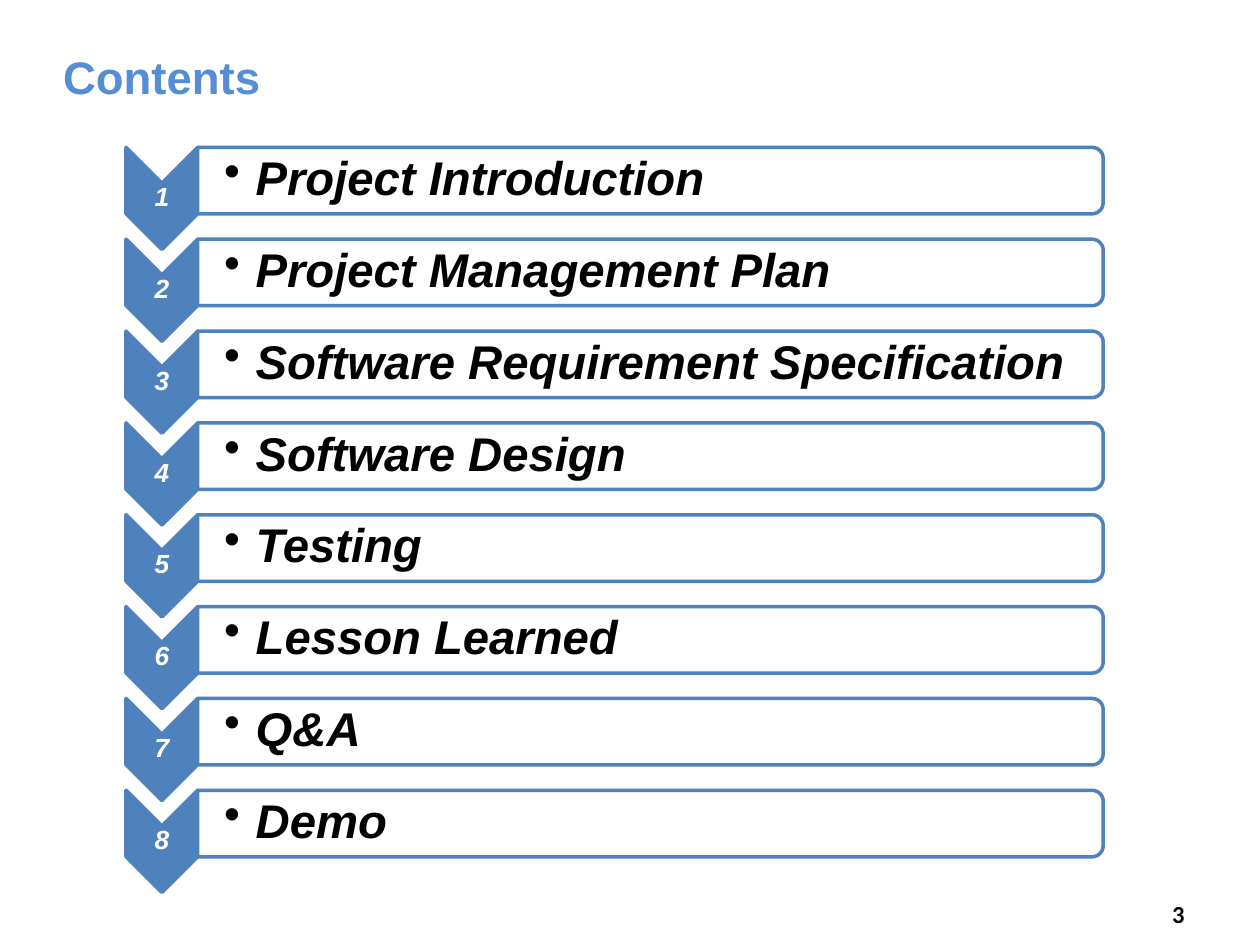
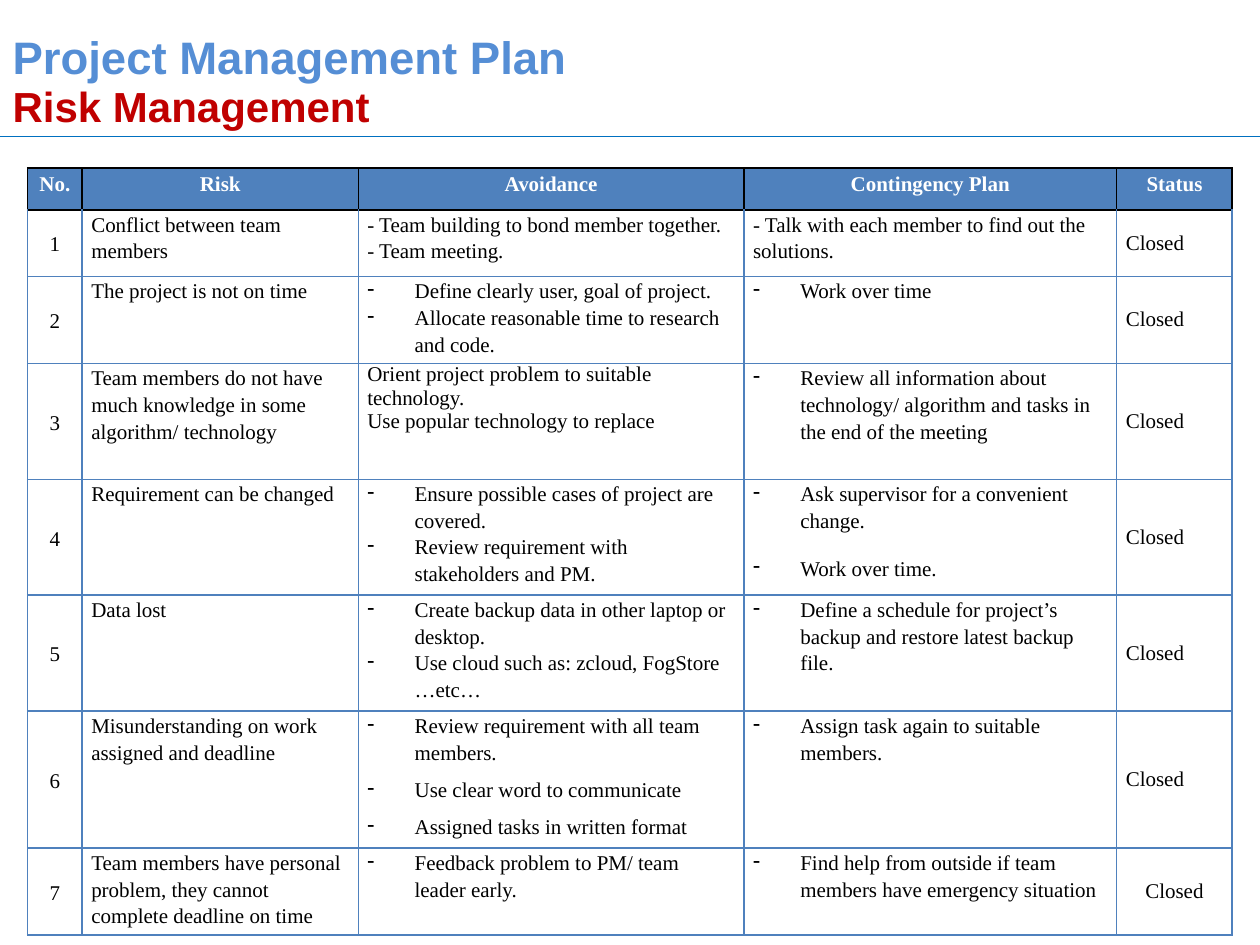
from lxml import etree
from pptx import Presentation
from pptx.dml.color import RGBColor
from pptx.enum.shapes import MSO_CONNECTOR, MSO_SHAPE
from pptx.enum.text import MSO_ANCHOR, MSO_AUTO_SIZE, PP_ALIGN
from pptx.oxml.ns import qn
from pptx.util import Pt

LEFT, MID, RIGHT = PP_ALIGN.LEFT, PP_ALIGN.CENTER, PP_ALIGN.RIGHT
TOP, MIDDLE = MSO_ANCHOR.TOP, MSO_ANCHOR.MIDDLE
FIXED = MSO_AUTO_SIZE.NONE
CHEVRON = MSO_SHAPE.CHEVRON
ROUND = MSO_SHAPE.ROUND_2_SAME_RECTANGLE
STRAIGHT = MSO_CONNECTOR.STRAIGHT

SKY = RGBColor(0x55, 0x8E, 0xD5)
BLUE = RGBColor(0x4F, 0x81, 0xBD)
RULE = RGBColor(0x00, 0x70, 0xC0)
RED = RGBColor(0xC0, 0x00, 0x00)
BLACK = RGBColor(0, 0, 0)
WHITE = RGBColor(0xFF, 0xFF, 0xFF)

SANS, SERIF, SMALL = "Arial", "Times New Roman", "Calibri"
WIDTH, HEIGHT = 720, 540
TITLE_ONLY = 5

TOPICS = [
    "Project Introduction", "Project Management Plan",
    "Software Requirement Specification", "Software Design",
    "Testing", "Lesson Learned", "Q&A", "Demo",
]


def plain(text, lead=1.15):
    return text, lead, False, 0


def dash(text, gap=0):
    return text, 1.15, True, gap


HEADS = ["No.", "Risk", "Avoidance", "Contingency Plan", "Status"]
COLS = [31.2, 157.8, 220.4, 213, 66]
ROWS = [24, 37.9, 49.7, 66.3, 66.3, 66.3, 78.3, 49.7]
RISKS = [
    ("Conflict between team members",
     [plain("- Team building to bond member together."),
      plain("- Team meeting.")],
     [plain("- Talk with each member to find out the solutions.")]),
    ("The project is not on time",
     [dash("Define clearly user, goal of project."),
      dash("Allocate reasonable time to research and code.")],
     [dash("Work over time")]),
    ("Team members do not have much knowledge in some algorithm/ technology",
     [plain("Orient project problem to suitable technology.", 1),
      plain("Use popular technology to replace", 1)],
     [dash("Review all information about technology/ algorithm and tasks "
           "in the end of the meeting")]),
    ("Requirement can be changed",
     [dash("Ensure possible cases of project are covered."),
      dash("Review requirement with stakeholders and PM.")],
     [dash("Ask supervisor for a convenient change.", 6),
      dash("Work over time.", 6)]),
    ("Data lost",
     [dash("Create backup data in other laptop or desktop."),
      dash("Use cloud such as: zcloud, FogStore …etc…")],
     [dash("Define a schedule for project’s backup and restore latest "
           "backup file.")]),
    ("Misunderstanding on work assigned and deadline",
     [dash("Review requirement with all team members."),
      dash("Use clear word to communicate", 6),
      dash("Assigned tasks in written format")],
     [dash("Assign task again to suitable members.")]),
    ("Team members have personal problem, they cannot complete deadline "
     "on time",
     [dash("Feedback problem to PM/ team leader early.")],
     [dash("Find help from outside if team members have emergency "
           "situation")]),
]


def style(para, size, color, face=SANS, bold=True, slant=False,
          align=LEFT, lead=1.0, gap=0):
    para.alignment = align
    para.line_spacing = lead
    para.space_before = para.space_after = Pt(gap)
    for run in para.runs:
        font = run.font
        font.name, font.size = face, Pt(size)
        font.bold, font.italic = bold, slant
        font.color.rgb = color


def bullet(para, mark, inset):
    props = para._p.get_or_add_pPr()
    props.set("marL", str(Pt(inset)))
    props.set("indent", str(-Pt(inset)))
    etree.SubElement(props, qn("a:buChar")).set("char", mark)


def pad(item, left, top, right, low):
    item.margin_left, item.margin_top = Pt(left), Pt(top)
    item.margin_right, item.margin_bottom = Pt(right), Pt(low)


def place(shape, box):
    shape.left, shape.top, shape.width, shape.height = map(Pt, box)


def label(slide, box, text, pads):
    frame = slide.shapes.add_textbox(*map(Pt, box)).text_frame
    frame.word_wrap = True
    frame.vertical_anchor = MIDDLE
    pad(frame, *pads)
    frame.text = text
    return frame.paragraphs[0]


def head(slide, box, lines, anchor, pads):
    title = slide.shapes.title
    place(title, box)
    frame = title.text_frame
    frame.text = "\n".join(text for text, _, _ in lines)
    frame.auto_size = FIXED
    frame.word_wrap = True
    frame.vertical_anchor = anchor
    pad(frame, *pads)
    for para, (_, size, color) in zip(frame.paragraphs, lines):
        style(para, size, color, lead=0.95)


def turned(slide, kind, box, fill):
    left, top, width, height = box
    shift = (width - height) / 2
    shape = slide.shapes.add_shape(
        kind, *map(Pt, (left + shift, top - shift, height, width)))
    shape.rotation = 90
    shape.shadow.inherit = False
    shape.fill.solid()
    shape.fill.fore_color.rgb = fill
    shape.line.color.rgb = BLUE
    shape.line.width = Pt(2)


def topic(slide, box, number, text):
    left, top, width, height = box
    arrow = 41
    turned(slide, CHEVRON, (left, top, arrow, height), BLUE)
    para = label(slide, (left, top + 20.4, arrow, 17.3), str(number), (1,) * 4)
    style(para, 15, WHITE, slant=True, align=MID, lead=0.9)
    turned(slide, ROUND, (left + arrow, top, width - arrow, 38), WHITE)
    para = label(slide, (left + arrow, top + 1.8, width - arrow, 34),
                 text, (15.1, 1.4, 1.4, 1.4))
    style(para, 27, BLACK, slant=True, lead=0.9)
    bullet(para, "•", 18)


def topics(slide, box):
    left, top, width, height = box
    tall = 58.4
    step = (height - tall) / (len(TOPICS) - 1)
    for i, text in enumerate(TOPICS):
        topic(slide, (left, top + i * step, width, tall), i + 1, text)


def page(slide, box, number):
    para = label(slide, box, number, (7.2, 3.6, 7.2, 3.6))
    style(para, 14, BLACK, SMALL, align=RIGHT)


def rule(slide, box):
    left, top, width, _ = box
    line = slide.shapes.add_connector(
        STRAIGHT, Pt(left), Pt(top), Pt(left + width), Pt(top))
    line.line.color.rgb = RULE
    line.line.width = Pt(0.75)
    etree.SubElement(line._element.spPr, qn("a:effectLst"))


def edge(cell, color, roof):
    props = cell._tc.get_or_add_tcPr()
    for side in "LRTB":
        line = etree.SubElement(props, qn("a:ln" + side), w=str(Pt(1)))
        fill = etree.SubElement(line, qn("a:solidFill"))
        tint = roof if side == "T" else color
        etree.SubElement(fill, qn("a:srgbClr"), val=str(tint))


def write(cell, paras, color=BLACK, bold=False, align=LEFT, anchor=TOP):
    cell.vertical_anchor = anchor
    frame = cell.text_frame
    frame.text = "\n".join(part[0] for part in paras)
    for para, (_, lead, mark, gap) in zip(frame.paragraphs, paras):
        style(para, 12, color, SERIF, bold, align=align, lead=lead, gap=gap)
        if mark:
            bullet(para, "-", 27)


def risks(slide, box):
    shape = slide.shapes.add_table(len(ROWS), len(COLS), *map(Pt, box))
    table = shape.table
    table.first_row = table.horz_banding = False
    for col, width in zip(table.columns, COLS):
        col.width = Pt(width)
    for row, height in zip(table.rows, ROWS):
        row.height = Pt(height)
    for cell, text in zip(table.rows[0].cells, HEADS):
        pad(cell, 3.6, 0.7, 3.6, 0.7)
        edge(cell, BLACK, BLACK)
        cell.fill.solid()
        cell.fill.fore_color.rgb = BLUE
        write(cell, [plain(text)], WHITE, True, MID)
    for i, (risk, avoid, backup) in enumerate(RISKS, 1):
        cells = list(table.rows[i].cells)
        for cell in cells:
            pad(cell, 5.2, 0, 5.2, 0)
            edge(cell, BLUE, BLACK if i == 1 else BLUE)
            cell.fill.background()
        last = i == len(RISKS)
        write(cells[0], [plain(str(i))], align=MID, anchor=MIDDLE)
        write(cells[1], [plain(risk)])
        write(cells[2], avoid)
        write(cells[3], backup)
        write(cells[4], [("Closed", 1.0, False, 0 if last else 6)],
              align=MID if last else LEFT, anchor=MIDDLE)


def main():
    deck = Presentation()
    deck.slide_width, deck.slide_height = Pt(WIDTH), Pt(HEIGHT)
    layout = deck.slide_layouts[TITLE_ONLY]

    slide = deck.slides.add_slide(layout)
    head(slide, (36, 24, 372, 42), [("Contents", 26, SKY)], MIDDLE, (0,) * 4)
    topics(slide, (72, 84.2, 558.4, 425.8))
    page(slide, (569.5, 504, 114.5, 36), "3")

    slide = deck.slides.add_slide(layout)
    rule(slide, (0, 78, WIDTH, 0))
    head(slide, (0, 15, 360, 92),
         [("Project Management Plan", 26, SKY), ("Risk Management", 24, RED)],
         TOP, (7.2, 3.6, 7.2, 3.6))
    risks(slide, (15.8, 96, sum(COLS), sum(ROWS)))

    deck.save("out.pptx")


if __name__ == "__main__":
    main()
